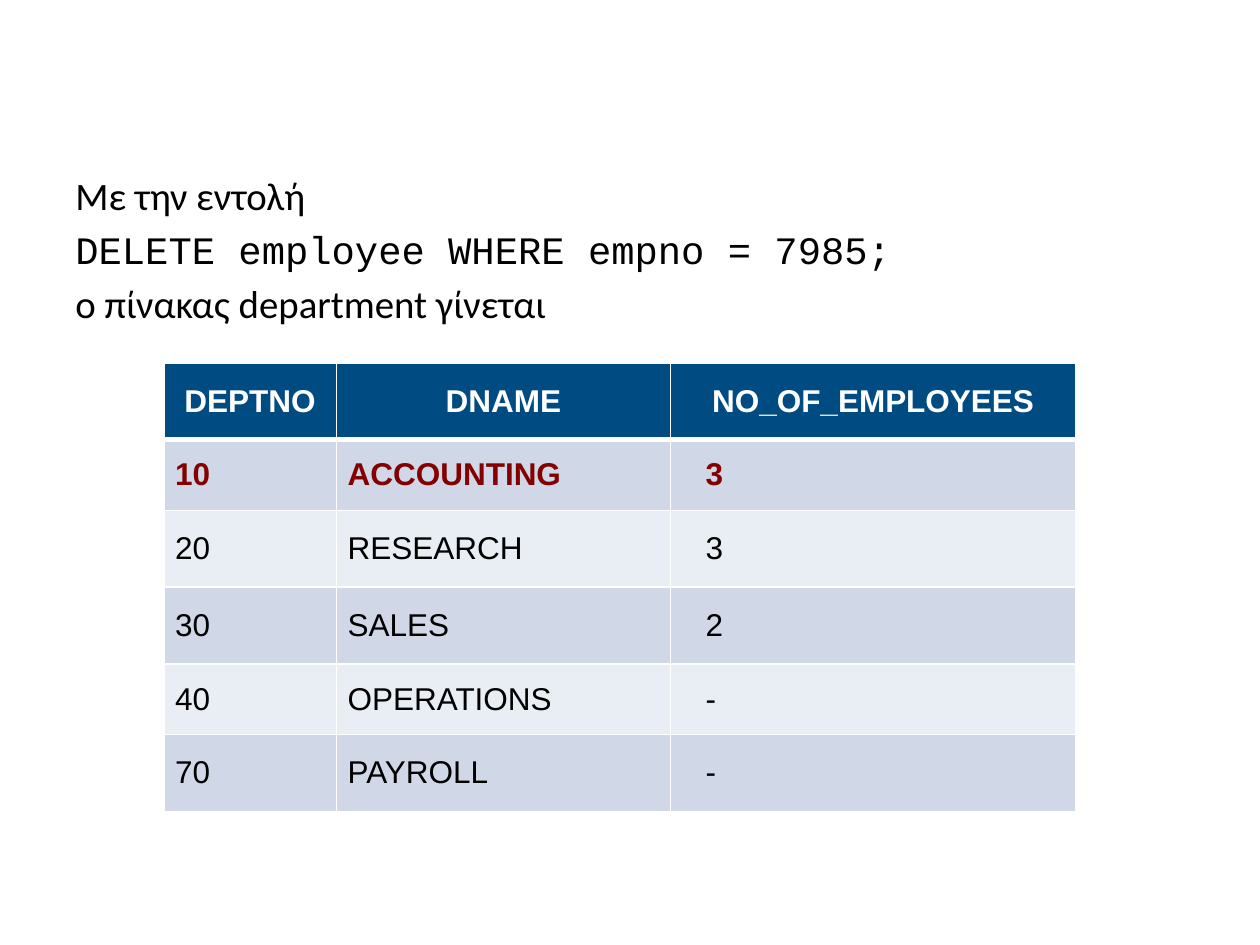
from lxml import etree
from pptx import Presentation
from pptx.dml.color import RGBColor
from pptx.enum.text import MSO_ANCHOR, PP_ALIGN
from pptx.oxml.ns import qn
from pptx.util import Inches, Pt

MIDDLE = MSO_ANCHOR.MIDDLE
LEFT, CENTER = PP_ALIGN.LEFT, PP_ALIGN.CENTER

WHITE = RGBColor(0xFF, 0xFF, 0xFF)
BLACK = RGBColor(0x00, 0x00, 0x00)
NAVY = RGBColor(0x00, 0x4B, 0x82)
DARK_RED = RGBColor(0x82, 0x00, 0x00)
BANDS = (RGBColor(0xD0, 0xD8, 0xE8), RGBColor(0xE9, 0xED, 0xF4))

SLIDE_WIDTH, SLIDE_HEIGHT = Inches(10), Inches(7.5)
INTRO_SIZE = 22.2
INTRO = (
    ("Με την εντολή", "Calibri"),
    ("DELETE employee WHERE empno = 7985;", "Courier New"),
    ("ο πίνακας department γίνεται", "Calibri"),
)
DEPARTMENTS = (
    ("DEPTNO", "DNAME", "NO_OF_EMPLOYEES"),
    ("10", "ACCOUNTING", "3"),
    ("20", "RESEARCH", "3"),
    ("30", "SALES", "2"),
    ("40", "OPERATIONS", "-"),
    ("70", "PAYROLL", "-"),
)
COLUMN_WIDTHS = (1.37, 2.65, 3.22)
ROW_HEIGHTS = (0.61, 0.56, 0.61, 0.61, 0.56, 0.61)
COUNT_COLUMN = 2
COUNT_INDENT = 0.28
CHANGED_ROW = 1


def set_font(run, **values):
    color = values.pop("color")
    for name, value in values.items():
        setattr(run.font, name, value)
    run.font.color.rgb = color


def add_intro(slide):
    box = slide.shapes.add_textbox(
        int(SLIDE_WIDTH * 0.05), Inches(1.31), int(SLIDE_WIDTH * 0.9), Inches(1.34))
    frame = box.text_frame
    frame.word_wrap = True
    for number, (line, font) in enumerate(INTRO):
        paragraph = frame.add_paragraph() if number else frame.paragraphs[0]
        paragraph.space_before = Pt(INTRO_SIZE * 0.2)
        run = paragraph.add_run()
        run.text = line
        set_font(run, name=font, size=Pt(INTRO_SIZE), color=BLACK)


def set_borders(cell, widths):
    """Draw white cell borders; widths maps each side (L, R, T, B) to points."""
    properties = cell._tc.get_or_add_tcPr()
    for side, width in widths.items():
        line = etree.SubElement(properties, qn(f"a:ln{side}"), w=str(Pt(width)))
        fill = etree.SubElement(line, qn("a:solidFill"))
        etree.SubElement(fill, qn("a:srgbClr"), val=str(WHITE))


def format_cell(cell, text, row, column):
    header = row == 0
    counts = column == COUNT_COLUMN
    side_margin = 0 if counts else 0.09
    edge_margin = 0 if counts else 0.03
    layout = {
        "vertical_anchor": MIDDLE,
        "margin_left": Inches(COUNT_INDENT if counts and not header else side_margin),
        "margin_right": Inches(side_margin),
        "margin_top": Inches(edge_margin),
        "margin_bottom": Inches(edge_margin),
    }
    for name, value in layout.items():
        setattr(cell, name, value)

    set_borders(cell, {"L": 1, "R": 1, "T": 3 if row == 1 else 1, "B": 3 if header else 1})
    cell.fill.solid()
    cell.fill.fore_color.rgb = NAVY if header else BANDS[(row - 1) % 2]

    paragraph = cell.text_frame.paragraphs[0]
    paragraph.alignment = CENTER if header else LEFT
    run = paragraph.add_run()
    run.text = text
    color = {0: WHITE, CHANGED_ROW: DARK_RED}.get(row, BLACK)
    set_font(run, name="Arial", size=Pt(18), bold=row <= CHANGED_ROW, color=color)


def add_department_table(slide):
    table = slide.shapes.add_table(
        len(ROW_HEIGHTS), len(COLUMN_WIDTHS), Inches(1.3), Inches(2.88),
        Inches(sum(COLUMN_WIDTHS)), Inches(sum(ROW_HEIGHTS))).table
    for column, width in zip(table.columns, COLUMN_WIDTHS):
        column.width = Inches(width)
    for row, height in zip(table.rows, ROW_HEIGHTS):
        row.height = Inches(height)
    for row, department in enumerate(DEPARTMENTS):
        for column, text in enumerate(department):
            format_cell(table.cell(row, column), text, row, column)


def main():
    presentation = Presentation()
    presentation.slide_width = SLIDE_WIDTH
    presentation.slide_height = SLIDE_HEIGHT
    slide = presentation.slides.add_slide(presentation.slide_layouts[6])
    add_intro(slide)
    add_department_table(slide)
    presentation.save("out.pptx")


if __name__ == "__main__":
    main()
